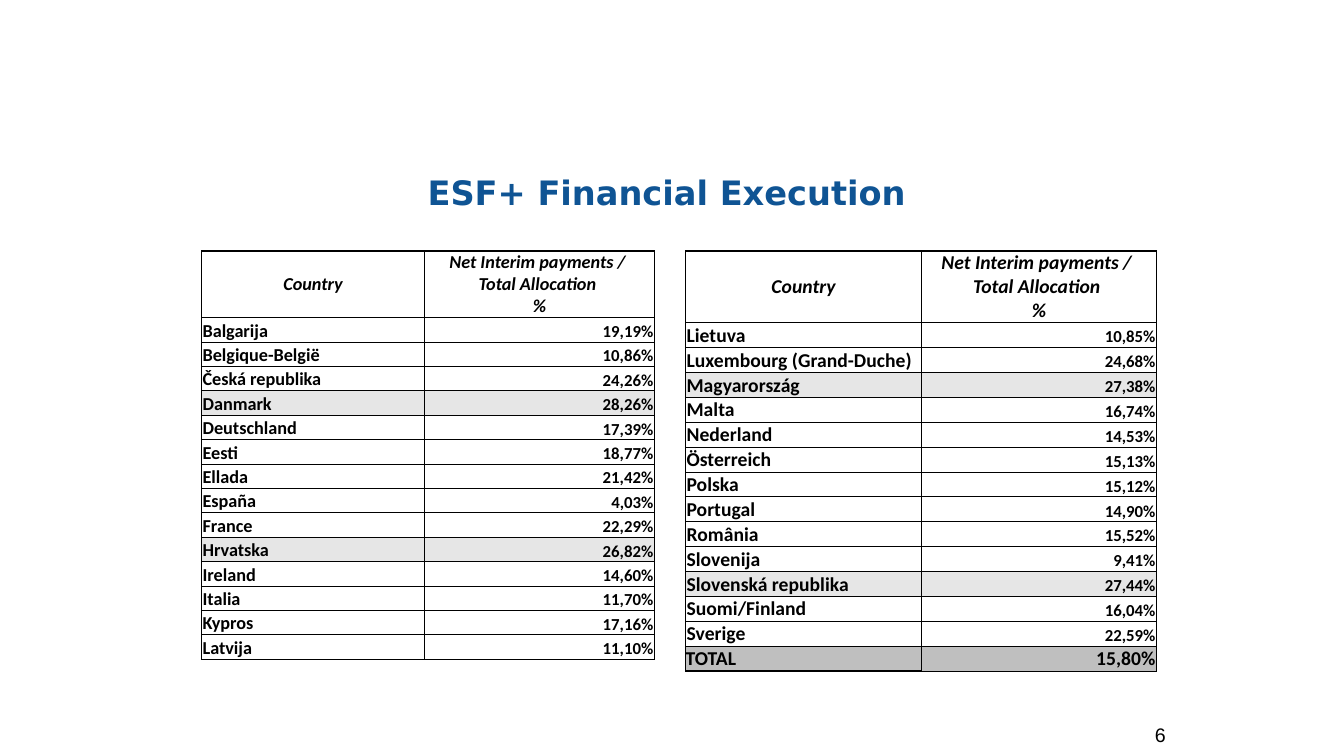
from lxml import etree
from pptx import Presentation
from pptx.dml.color import RGBColor
from pptx.enum.text import MSO_ANCHOR, MSO_AUTO_SIZE, PP_ALIGN
from pptx.oxml.ns import qn
from pptx.util import Pt

PX = 9144  # EMU per px, 100 px to the inch
TITLE_ONLY = 5
LEFT, CENTER, RIGHT = PP_ALIGN.LEFT, PP_ALIGN.CENTER, PP_ALIGN.RIGHT
TOP, MIDDLE, BOTTOM = MSO_ANCHOR.TOP, MSO_ANCHOR.MIDDLE, MSO_ANCHOR.BOTTOM

BLACK = RGBColor(0x00, 0x00, 0x00)
BLUE = RGBColor(0x0F, 0x54, 0x94)
LIGHT_GREY = RGBColor(0xE6, 0xE6, 0xE6)
MID_GREY = RGBColor(0xBF, 0xBF, 0xBF)

THIN, HEAVY = 0.5, 1
PERCENT_SIZE = 12
TOTAL = "TOTAL"
HEADINGS = ("Country", "Net Interim payments / \nTotal Allocation \n%")
ROW_FILLS = {
    "Danmark": LIGHT_GREY,
    "Hrvatska": LIGHT_GREY,
    "Magyarország": LIGHT_GREY,
    "Slovenská republika": LIGHT_GREY,
    TOTAL: MID_GREY,
}

BALGARIJA_TO_LATVIJA = [
    ("Balgarija", "19,19%"),
    ("Belgique-België", "10,86%"),
    ("Česká republika", "24,26%"),
    ("Danmark", "28,26%"),
    ("Deutschland", "17,39%"),
    ("Eesti", "18,77%"),
    ("Ellada", "21,42%"),
    ("España", "4,03%"),
    ("France", "22,29%"),
    ("Hrvatska", "26,82%"),
    ("Ireland", "14,60%"),
    ("Italia", "11,70%"),
    ("Kypros", "17,16%"),
    ("Latvija", "11,10%"),
]
LIETUVA_TO_TOTAL = [
    ("Lietuva", "10,85%"),
    ("Luxembourg (Grand-Duche)", "24,68%"),
    ("Magyarország", "27,38%"),
    ("Malta", "16,74%"),
    ("Nederland", "14,53%"),
    ("Österreich", "15,13%"),
    ("Polska", "15,12%"),
    ("Portugal", "14,90%"),
    ("România", "15,52%"),
    ("Slovenija", "9,41%"),
    ("Slovenská republika", "27,44%"),
    ("Suomi/Finland", "16,04%"),
    ("Sverige", "22,59%"),
    (TOTAL, "15,80%"),
]


def write(frame, text, size, font, color=BLACK, bold=False, italic=False, align=LEFT):
    """Fill a text frame with one paragraph, a run for each line."""
    paragraph = frame.paragraphs[0]
    paragraph.alignment = align
    for index, line in enumerate(text.split("\n")):
        if index:
            paragraph.add_line_break()
        run = paragraph.add_run()
        run.text = line
        run.font.name = font
        run.font.size = Pt(size)
        run.font.bold = bold
        run.font.italic = italic
        run.font.color.rgb = color


def set_borders(cell, widths):
    """Draw black cell edges; widths maps L, R, T and B, in that order."""
    properties = cell._tc.get_or_add_tcPr()
    for index, (side, width) in enumerate(widths.items()):
        edge = etree.Element(qn("a:ln" + side), w=str(Pt(width)))
        solid = etree.SubElement(edge, qn("a:solidFill"))
        etree.SubElement(solid, qn("a:srgbClr"), val=str(BLACK))
        properties.insert(index, edge)


def add_heading(slide, box):
    heading = slide.shapes.title
    heading.left, heading.top, heading.width, heading.height = (v * PX for v in box)
    frame = heading.text_frame
    frame.word_wrap = True
    frame.auto_size = MSO_AUTO_SIZE.NONE
    frame.vertical_anchor = TOP
    write(frame, "ESF+ Financial Execution ", 24, "DejaVu Sans", BLUE, bold=True, align=CENTER)


def add_page_number(slide, box):
    frame = slide.shapes.add_textbox(*(v * PX for v in box)).text_frame
    frame.word_wrap = True
    write(frame, "6", 14, "Arial", align=RIGHT)


def add_execution_table(slide, box, countries, column_widths, header_height, size, heavy_rules):
    """heavy_rules lists the horizontal lines, counted from the top, that are thick."""
    rows = [HEADINGS] + countries
    table = slide.shapes.add_table(len(rows), 2, *(v * PX for v in box)).table
    table.first_row = table.horz_banding = False
    for column, width in zip(table.columns, column_widths):
        column.width = width * PX
    for row in table.rows:
        row.height = (box[3] - header_height) * PX // len(countries)
    table.rows[0].height = header_height * PX

    for r, texts in enumerate(rows):
        is_header, is_total = r == 0, texts[0] == TOTAL
        for c, text in enumerate(texts):
            cell = table.cell(r, c)
            inset = 0 if is_header or (is_total and c == 0) else PX
            cell.margin_left = cell.margin_right = cell.margin_top = inset
            cell.margin_bottom = 0
            cell.vertical_anchor = MIDDLE if is_header else BOTTOM
            if texts[0] in ROW_FILLS:
                cell.fill.solid()
                cell.fill.fore_color.rgb = ROW_FILLS[texts[0]]
            else:
                cell.fill.background()

            small = c == 1 and not (is_header or is_total)
            write(cell.text_frame, text, PERCENT_SIZE if small else size, "Calibri",
                  bold=True, italic=is_header,
                  align=CENTER if is_header else (LEFT, RIGHT)[c])

            total_label = is_total and c == 0
            thick = {
                "L": c == 0 and (is_header or is_total),
                "R": False,
                "T": r in heavy_rules,
                "B": r + 1 in heavy_rules or total_label,
            }
            set_borders(cell, {side: HEAVY if on else THIN for side, on in thick.items()})


def main():
    presentation = Presentation()
    presentation.slide_width = 1333 * PX
    presentation.slide_height = 750 * PX
    slide = presentation.slides.add_slide(presentation.slide_layouts[TITLE_ONLY])

    # Title and page number
    add_heading(slide, (217, 166, 900, 71))
    add_page_number(slide, (933, 712, 233, 52))

    # Countries in two tables side by side
    add_execution_table(slide, (200, 249, 449, 405), BALGARIJA_TO_LATVIJA,
                        (221, 228), 66, 13, {0})
    add_execution_table(slide, (680, 249, 467, 417), LIETUVA_TO_TOTAL,
                        (234, 233), 71, 14, {0, 1, 2})

    presentation.save("out.pptx")


if __name__ == "__main__":
    main()
